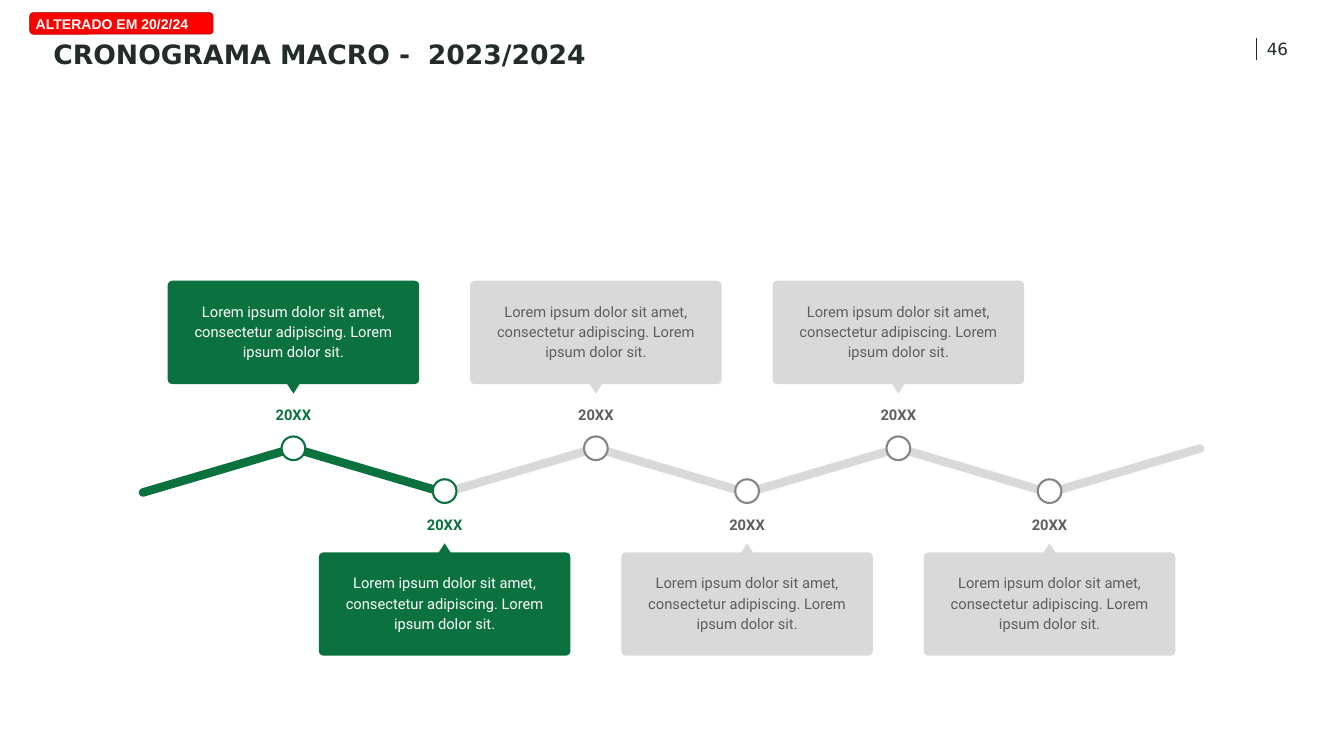
from lxml import etree
from pptx import Presentation
from pptx import util as u
from pptx.dml.color import RGBColor
from pptx.enum import shapes, text
from pptx.oxml import ns

GREEN = RGBColor(0x0B, 0x71, 0x3F)
LIGHT = RGBColor(0xD9, 0xD9, 0xD9)
MID = RGBColor(0x85, 0x85, 0x85)
GRAY = RGBColor(0x5E, 0x5E, 0x5E)
INK = RGBColor(0x23, 0x2C, 0x28)
RED = RGBColor(0xFF, 0x00, 0x00)
MAROON = RGBColor(0x98, 0x00, 0x00)
WHITE = RGBColor(0xFF, 0xFF, 0xFF)

COLUMN = 3            # distance between milestones
FIRST = 5.82          # centre of the first milestone
MILESTONES = 6
DONE = 2              # milestones shown in green
LOREM = "Lorem ipsum dolor sit amet, consectetur adipiscing. Lorem ipsum dolor sit."


def add_shape(parent, kind, center, top, width, height, fill, line=None, weight=0):
    """Add a flat preset shape, placed by its horizontal centre."""
    shape = parent.add_shape(kind, u.Inches(center - width / 2), u.Inches(top),
                             u.Inches(width), u.Inches(height))
    shape.shadow.inherit = False
    shape.fill.solid()
    shape.fill.fore_color.rgb = fill
    if line is None:
        shape.line.fill.background()
    else:
        shape.line.color.rgb = line
        shape.line.width = u.Pt(weight)
    return shape


def add_text(parent, words, center, top, width, height, font, size, color,
             bold=False, inset=0.1, align=text.PP_ALIGN.CENTER):
    """Add a wrapped text box, placed by its horizontal centre; return its paragraph."""
    box = parent.add_textbox(u.Inches(center - width / 2), u.Inches(top),
                             u.Inches(width), u.Inches(height))
    frame = box.text_frame
    frame.word_wrap = True
    frame.margin_left = frame.margin_right = u.Inches(inset)
    frame.margin_top = frame.margin_bottom = u.Inches(inset)
    para = frame.paragraphs[0]
    para.text = words
    para.alignment = align
    para.font.name, para.font.size, para.font.bold = font, u.Pt(size), bold
    para.font.color.rgb = color
    return para


deck = Presentation()
deck.slide_width, deck.slide_height = u.Inches(26.66), u.Inches(15)
slide = deck.slides.add_slide(deck.slide_layouts[6])
canvas = slide.shapes

# Header: page number, divider, title and revision tag
add_text(canvas, "46", 24.96, 0.67, 1.38, 0.62, "DejaVu Sans", 24, INK,
         align=text.PP_ALIGN.RIGHT)
divider = canvas.add_connector(shapes.MSO_CONNECTOR.STRAIGHT, u.Inches(24.92),
                               u.Inches(0.75), u.Inches(24.92), u.Inches(1.2))
divider.line.color.rgb = INK
divider.line.width = u.Pt(2)
etree.SubElement(divider._element.spPr, ns.qn("a:effectLst"))

title = add_text(canvas, "CRONOGRAMA MACRO -\t2023/2024", 11.85, 0.64, 21.78, 0.71,
                 "DejaVu Sans", 38, INK, bold=True, align=text.PP_ALIGN.LEFT)
title.line_spacing = 1.02
tabs = etree.Element(ns.qn("a:tabLst"))
etree.SubElement(tabs, ns.qn("a:tab"), pos=str(u.Inches(7.43)), algn="l")
title.font._element.addprevious(tabs)

tag = add_shape(canvas, shapes.MSO_SHAPE.ROUNDED_RECTANGLE, 2.41, 0.25, 3.64, 0.43,
                RED, MAROON, 0.75)
tag.adjustments[0] = 0.167
frame = tag.text_frame
frame.word_wrap = True
frame.vertical_anchor = text.MSO_ANCHOR.MIDDLE
frame.margin_left = frame.margin_right = u.Inches(0.1)
frame.margin_top = frame.margin_bottom = u.Inches(0.1)
para = frame.paragraphs[0]
para.text = "ALTERADO EM 20/2/24"
para.alignment = text.PP_ALIGN.LEFT
para.font.name, para.font.size, para.font.bold = "Arial", u.Pt(20), True
para.font.color.rgb = WHITE

# Zigzag line: one segment on each side of every milestone
for i in reversed(range(MILESTONES + 1)):
    segment = add_shape(canvas, shapes.MSO_SHAPE.ROUNDED_RECTANGLE,
                        FIRST + (i - 0.5) * COLUMN, 9.25, 3.26, 0.17,
                        GREEN if i < DONE else LIGHT)
    segment.adjustments[0] = 0.5
    segment.rotation = 16.4 if i % 2 else -16.4

# Milestones: even ones have their card above the line, odd ones below
for i in range(MILESTONES):
    center = FIRST + i * COLUMN
    above = i % 2 == 0
    card_top, pointer_top, year_top, dot_top = (
        (5.57, 7.61, 7.8, 8.66) if above else (10.96, 10.78, 9.99, 9.51))
    fill, ring, year_color, body_color = (
        (GREEN, GREEN, GREEN, WHITE) if i < DONE else (LIGHT, MID, GRAY, GRAY))

    group = canvas.add_group_shape().shapes
    card = add_shape(group, shapes.MSO_SHAPE.ROUNDED_RECTANGLE, center, card_top,
                     4.99, 2.05, fill)
    card.adjustments[0] = 0.045
    pointer = add_shape(group, shapes.MSO_SHAPE.ISOSCELES_TRIANGLE, center, pointer_top,
                        0.26, 0.2, fill)
    pointer.rotation = 180 if above else 0
    add_shape(group, shapes.MSO_SHAPE.OVAL, center, dot_top, 0.47, 0.47, WHITE, ring, 3)
    year = add_text(group, "20XX", center, year_top, 2.03, 0.8, "Roboto", 21,
                    year_color, bold=True, inset=0.27)
    body = add_text(group, LOREM, center, card_top + 0.11, 4.74, 1.82, "Roboto", 21,
                    body_color, inset=0.27)
    for para in (year, body):
        para.line_spacing = 1.15
        para.space_after = u.Pt(43)

deck.save("out.pptx")
